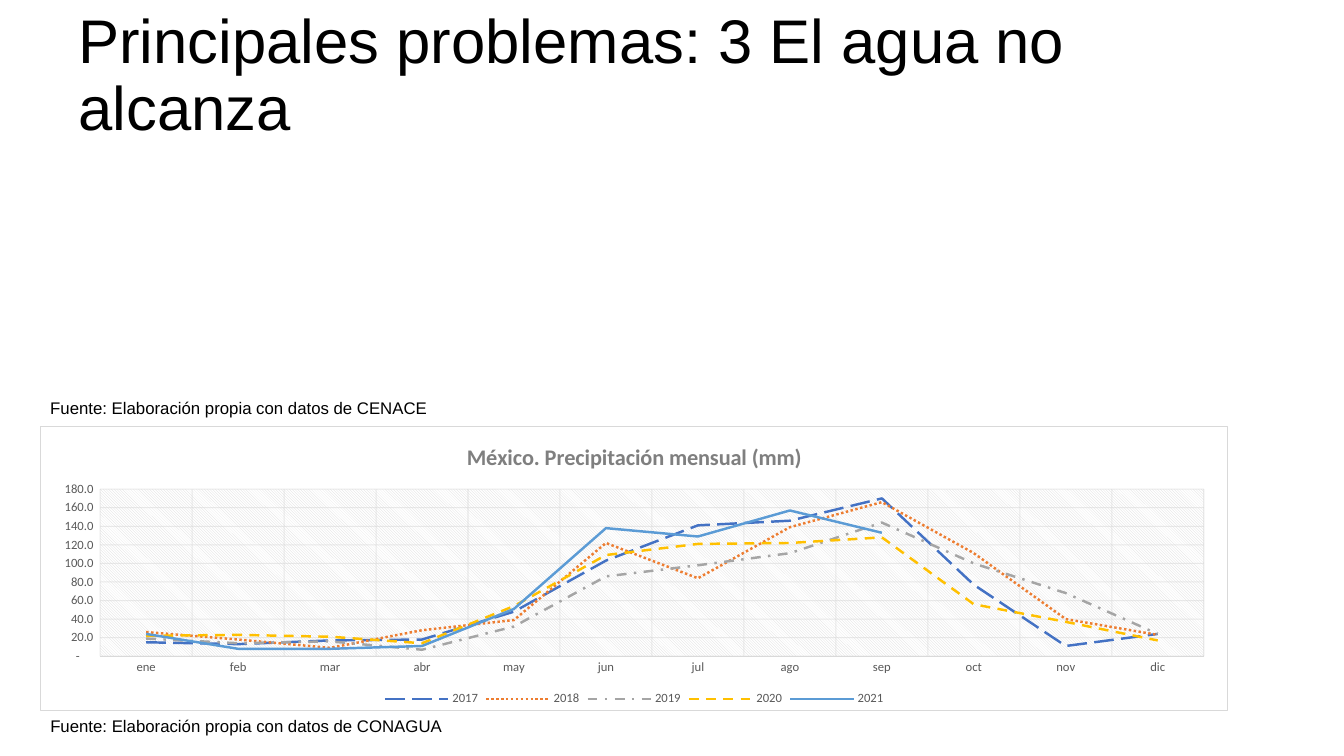
"""Build a slide with a line chart of monthly rainfall in Mexico."""
from dataclasses import dataclass

from lxml import etree
from pptx import Presentation
from pptx.chart.data import CategoryChartData
from pptx.dml.color import RGBColor
from pptx.enum.chart import XL_CHART_TYPE, XL_LEGEND_POSITION, XL_TICK_MARK
from pptx.enum.dml import MSO_LINE
from pptx.enum.text import MSO_ANCHOR, MSO_AUTO_SIZE
from pptx.oxml import parse_xml
from pptx.oxml.ns import nsdecls, qn
from pptx.util import Inches, Pt

LINE_CHART = XL_CHART_TYPE.LINE
LEGEND_BOTTOM = XL_LEGEND_POSITION.BOTTOM
NO_TICK = XL_TICK_MARK.NONE
MIDDLE = MSO_ANCHOR.MIDDLE
FIT_SHAPE = MSO_AUTO_SIZE.SHAPE_TO_FIT_TEXT
LONG_DASH, DOT = MSO_LINE.LONG_DASH, MSO_LINE.ROUND_DOT
DASH_DOT, DASH, SOLID = MSO_LINE.DASH_DOT, MSO_LINE.DASH, MSO_LINE.SOLID

PALE_GREY = "D9D9D9"
LABEL_GREY = "595959"
MONTHS = "ene feb mar abr may jun jul ago sep oct nov dic".split()


@dataclass
class Label:
    text: str
    left: float
    top: float
    width: float
    height: float
    size: int
    wrap: bool = False


@dataclass
class Year:
    name: str
    color: str
    dash: MSO_LINE
    rainfall: tuple


LABELS = [
    Label("Principales problemas: 3 El agua no alcanza", 0.68, 0.04, 11.5, 1.45, 44, True),
    Label("Fuente: Elaboración propia con datos de CENACE", 0.4, 3.9, 3.97, 0.3, 12),
    Label("Fuente: Elaboración propia con datos de CONAGUA", 0.4, 7.05, 4.12, 0.3, 12),
]
YEARS = [
    Year("2017", "4472C4", LONG_DASH, (15, 13, 17, 18, 48, 103, 141, 146, 170, 77, 11, 24)),
    Year("2018", "ED7D31", DOT, (26, 18, 9, 28, 39, 122, 84, 139, 166, 111, 40, 23)),
    Year("2019", "A5A5A5", DASH_DOT, (19, 14, 16, 7, 32, 86, 98, 111, 144, 100, 68, 24)),
    Year("2020", "FFC000", DASH, (22, 23, 21, 14, 54, 109, 121, 122, 128, 56, 37, 17)),
    Year("2021", "5B9BD5", SOLID, (24, 8, 8, 11, 51, 138, 129, 157, 133, None, None, None)),
]


def rgb(color: str) -> RGBColor:
    return RGBColor.from_string(color)


def style_font(font, name: str, size: float, color: str, bold: bool = False) -> None:
    font.name, font.size, font.bold = name, Pt(size), bold
    font.color.rgb = rgb(color)


def style_line(line, color: str, width: float) -> None:
    line.color.rgb = rgb(color)
    line.width = Pt(width)


def add_label(page, label: Label) -> None:
    box = page.shapes.add_textbox(
        Inches(label.left), Inches(label.top), Inches(label.width), Inches(label.height))
    frame = box.text_frame
    frame.word_wrap = label.wrap
    para = frame.paragraphs[0]
    para.text = label.text
    style_font(para.font, "Arial", label.size, "000000")
    if label.wrap:
        frame.vertical_anchor = MIDDLE
        para.line_spacing = 0.9
    else:
        frame.auto_size = FIT_SHAPE


def style_axis(axis) -> None:
    axis.major_tick_mark = axis.minor_tick_mark = NO_TICK
    style_font(axis.tick_labels.font, "Calibri", 9, LABEL_GREY)
    axis.has_major_gridlines = True
    style_line(axis.major_gridlines.format.line, PALE_GREY, 0.75)
    grid = axis._element.find(qn("c:majorGridlines"))
    for color in grid.iter(qn("a:srgbClr")):
        etree.SubElement(color, qn("a:alpha"), val="54000")


def paint_areas(chart) -> None:
    root = chart._chartSpace.find(qn("c:chart"))
    plot_area = root.find(qn("c:plotArea"))
    root.addnext(parse_xml(
        f'<c:spPr {nsdecls("c", "a")}><a:solidFill><a:srgbClr val="FFFFFF"/></a:solidFill>'
        f'<a:ln w="9525"><a:solidFill><a:srgbClr val="{PALE_GREY}"/></a:solidFill></a:ln></c:spPr>'))
    plot_area.append(parse_xml(
        f'<c:spPr {nsdecls("c", "a")}><a:pattFill prst="ltDnDiag">'
        f'<a:fgClr><a:srgbClr val="{PALE_GREY}"/></a:fgClr>'
        '<a:bgClr><a:srgbClr val="FFFFFF"/></a:bgClr></a:pattFill><a:ln><a:noFill/></a:ln></c:spPr>'))
    for old in plot_area.findall(qn("c:layout")):
        plot_area.remove(old)
    plot_area.insert(0, parse_xml(
        f'<c:layout {nsdecls("c")}><c:manualLayout><c:layoutTarget val="inner"/>'
        '<c:xMode val="edge"/><c:yMode val="edge"/><c:x val="0.05"/><c:y val="0.22"/>'
        '<c:w val="0.93"/><c:h val="0.59"/></c:manualLayout></c:layout>'))


def add_rainfall_chart(page) -> None:
    data = CategoryChartData()
    data.categories = MONTHS
    for year in YEARS:
        data.add_series(year.name, year.rainfall)
    chart = page.shapes.add_chart(
        LINE_CHART, Inches(0.4), Inches(4.23), Inches(11.78), Inches(2.82), data).chart
    style_font(chart.font, "Calibri", 10, "000000")

    chart.has_title = True
    para = chart.chart_title.text_frame.paragraphs[0]
    para.text = "México. Precipitación mensual (mm)"
    style_font(para.font, "Calibri", 16, "7F7F7F", bold=True)

    chart.has_legend = True
    chart.legend.position = LEGEND_BOTTOM
    chart.legend.include_in_layout = False
    style_font(chart.legend.font, "Calibri", 9, LABEL_GREY)

    months, rainfall = chart.category_axis, chart.value_axis
    for axis in (months, rainfall):
        style_axis(axis)
    style_line(months.format.line, PALE_GREY, 0.75)
    rainfall.format.line.fill.background()
    rainfall.minimum_scale, rainfall.maximum_scale, rainfall.major_unit = 0, 180, 20
    rainfall.tick_labels.number_format = '_-* #,##0.0_-;\\-* #,##0.0_-;_-* "-"??_-;'
    rainfall.tick_labels.number_format_is_linked = False

    for year, series in zip(YEARS, chart.plots[0].series):
        series.smooth = False
        style_line(series.format.line, year.color, 1.75)
        series.format.line.dash_style = year.dash
    paint_areas(chart)


def main() -> None:
    deck = Presentation()
    deck.slide_width, deck.slide_height = Inches(13.33), Inches(7.5)
    page = deck.slides.add_slide(deck.slide_layouts[6])
    add_rainfall_chart(page)
    for label in LABELS:
        add_label(page, label)
    deck.save("out.pptx")


if __name__ == "__main__":
    main()
